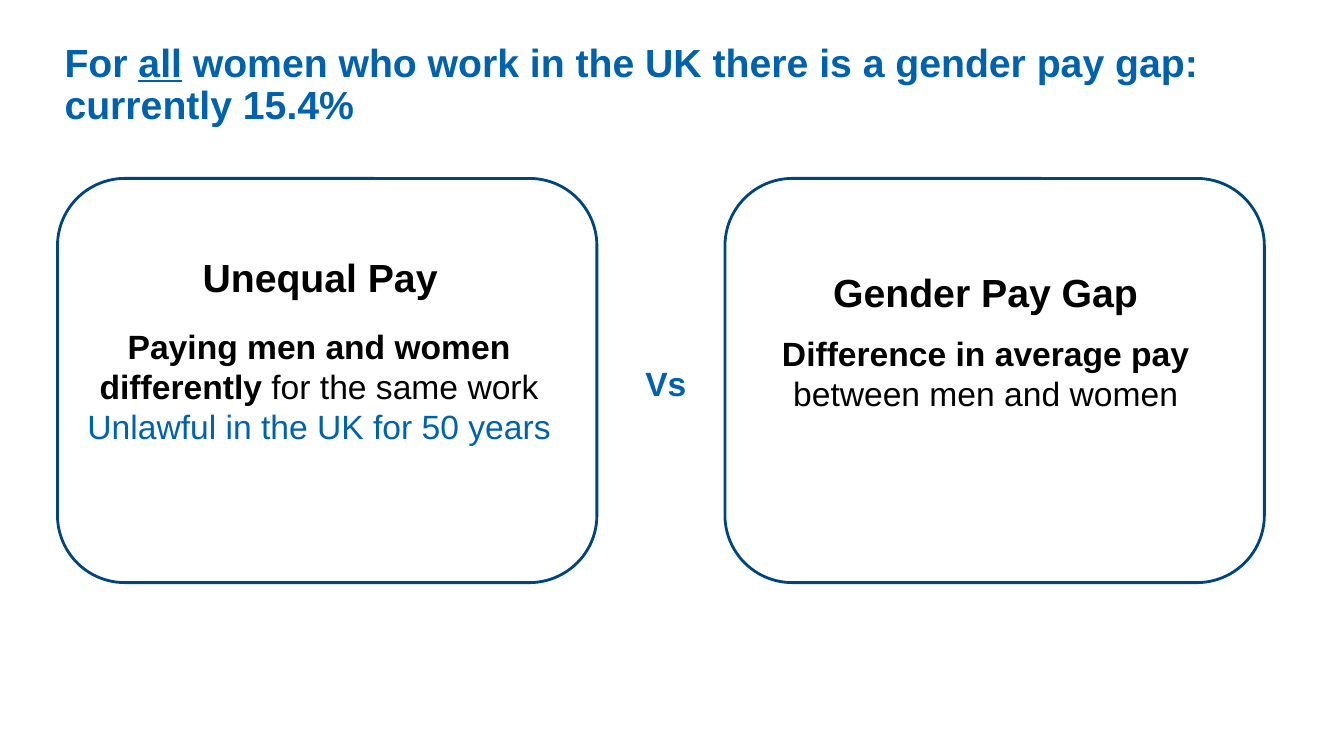
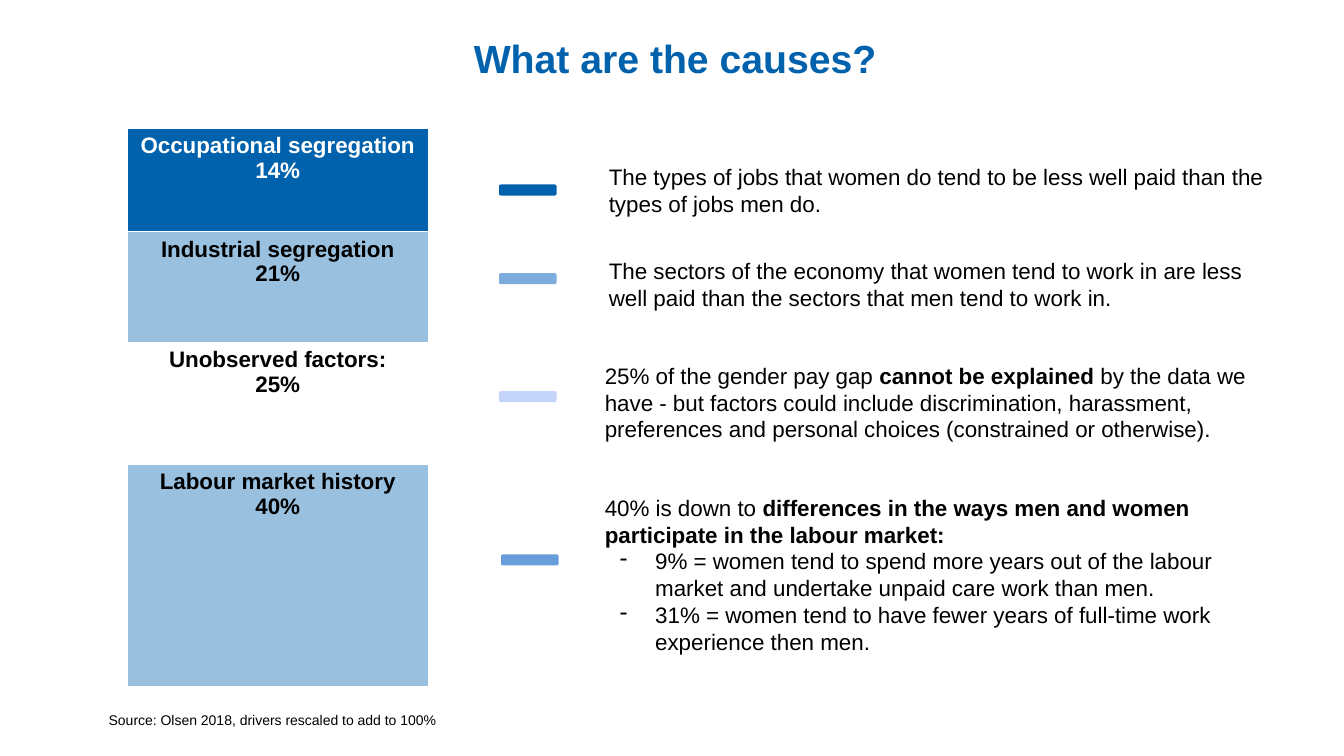
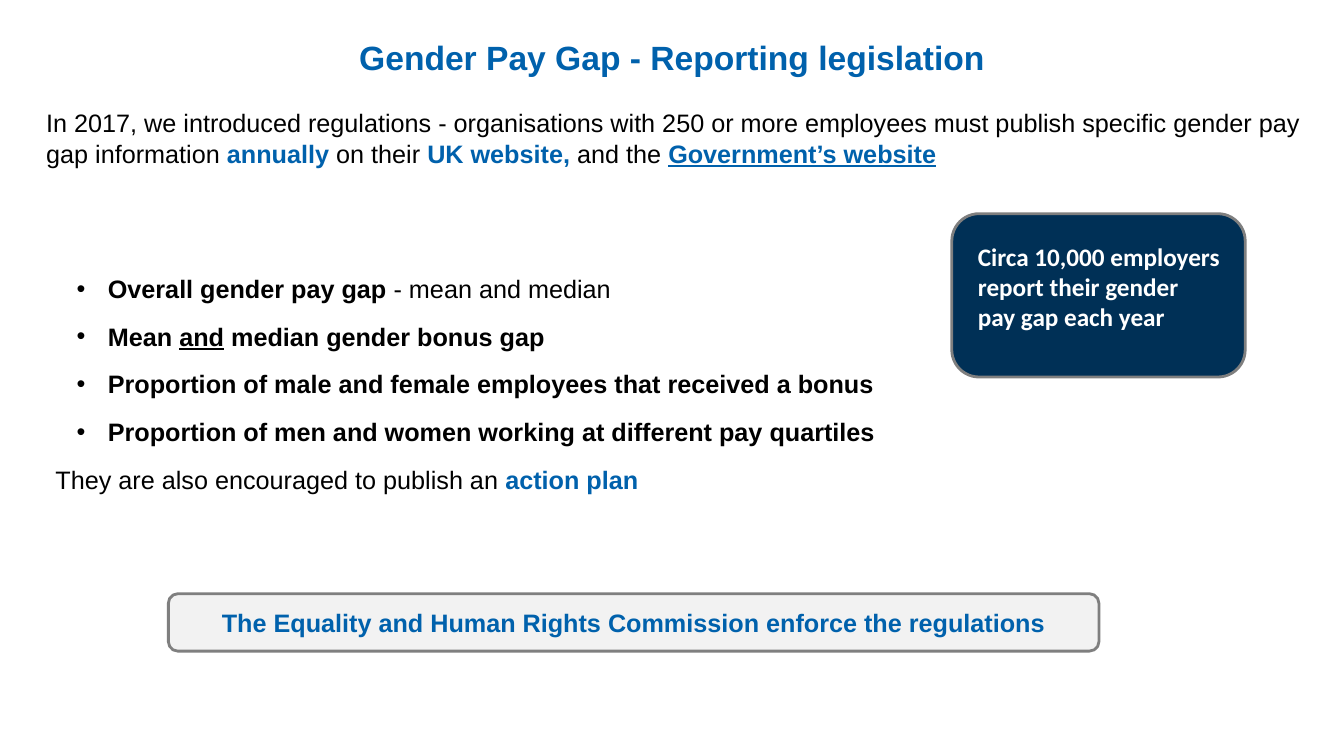
from lxml.etree import SubElement
from pptx import Presentation
from pptx.dml.color import RGBColor
from pptx.enum.shapes import MSO_SHAPE as Shape
from pptx.enum.text import MSO_ANCHOR as Anchor, MSO_AUTO_SIZE as AutoSize, PP_ALIGN as Align
from pptx.oxml.ns import qn
from pptx.util import Inches, Pt

BLUE = RGBColor(0x00, 0x61, 0xAC)
OUTLINE = RGBColor(0x00, 0x46, 0x7D)
NAVY = RGBColor(0x00, 0x30, 0x56)
GREY = RGBColor(0x7F, 0x7F, 0x7F)
PALE_GREY = RGBColor(0xF2, 0xF2, 0xF2)
PALE_BLUE = RGBColor(0x99, 0xC0, 0xDE)
BLACK = RGBColor(0, 0, 0)
WHITE = RGBColor(255, 255, 255)
MARKERS = [BLUE, RGBColor(0x7D, 0xAC, 0xDC), RGBColor(0xC4, 0xD4, 0xFB), RGBColor(0x68, 0x9D, 0xDB)]


def write(holder, paragraphs, size, box=None, insets=(0, 0, 0, 0), align=Align.LEFT,
          color=BLACK, font="Arial", anchor=Anchor.TOP, gap=0):
    if box:
        holder.left, holder.top, holder.width, holder.height = map(Inches, box)
    frame = holder.text_frame
    frame.word_wrap = True
    frame.auto_size = AutoSize.NONE
    frame.vertical_anchor = anchor
    frame.margin_left, frame.margin_top, frame.margin_right, frame.margin_bottom = map(Inches, insets)
    for index, (runs, bullet, indent, hanging) in enumerate(paragraphs):
        paragraph = frame.paragraphs[0] if index == 0 else frame.add_paragraph()
        properties = paragraph._p.get_or_add_pPr()
        properties.set("marL", str(Inches(indent)))
        properties.set("indent", str(-Inches(hanging)))
        if bullet:
            SubElement(properties, qn("a:buChar")).set("char", bullet)
        else:
            SubElement(properties, qn("a:buNone"))
        paragraph.alignment = align
        paragraph.space_before = Pt(gap if index else 0)
        for words, marks in runs:
            run = paragraph.add_run()
            run.text = words
            run.font.name = font
            run.font.size = Pt(size)
            run.font.bold = "b" in marks
            run.font.underline = "u" in marks
            run.font.color.rgb = BLUE if "a" in marks else color


def plain(*runs):
    return runs, None, 0, 0


deck = Presentation()
deck.slide_width = Inches(13.33)
deck.slide_height = Inches(7.5)
title_only = deck.slide_layouts[5]
title_and_body = deck.slide_layouts[1]
empty_box = [0, 0, 0, 0]
tight = (0.07, 0.04, 0.07, 0.04)
even = (0.1, 0.1, 0.1, 0.1)
standard = (0.1, 0.05, 0.1, 0.05)

gap_slide = deck.slides.add_slide(title_only)
write(gap_slide.shapes.title,
      [plain(("For ", "b"), ("all", "bu"),
             (" women who work in the UK there is a gender pay gap: currently 15.4%", "b"))],
      28, (0.64, 0.43, 12.12, 0.87), color=BLUE)
gap_slide.shapes.title.text_frame.paragraphs[0].line_spacing = 0.9

unequal_pay = [plain(("Paying men and women differently ", "b"), ("for the same work", "")),
               plain(("Unlawful in the UK for 50 years", "a"))]
average_gap = [plain(("Difference in average pay ", "b"), ("between men and women", ""))]
gap_texts = [
    (unequal_pay, 24, (0.78, 3.19, 4.77, 1.36), tight, Align.CENTER),
    (average_gap, 24, (7.63, 3.26, 4.29, 0.68), tight, Align.CENTER),
    ([plain(("Vs", "ab"))], 24, (6.4, 3.6, 0.65, 0.95), empty_box, Align.LEFT),
    ([plain(("Unequal Pay", "b"))], 28, (2.01, 2.51, 2.47, 0.57), empty_box, Align.LEFT),
    ([plain(("Gender Pay Gap", "b"))], 28, (8.05, 2.66, 3.45, 0.41), empty_box, Align.CENTER),
]
for paragraphs, size, box, insets, align in gap_texts:
    write(gap_slide.shapes.add_textbox(*empty_box), paragraphs, size, box, insets, align)
for left in (0.57, 7.19):
    card = gap_slide.shapes.add_shape(Shape.ROUNDED_RECTANGLE, Inches(left), Inches(1.77),
                                      Inches(5.35), Inches(4.01))
    card.shadow.inherit = False
    card.fill.background()
    card.line.color.rgb = OUTLINE
    card.line.width = Pt(2)

causes_slide = deck.slides.add_slide(title_only)
write(causes_slide.shapes.title, [plain(("What are the causes?", "b"))],
      28, (0.45, 0.34, 12.49, 0.52), align=Align.CENTER, color=BLUE)

history = [
    plain(("40% is down to ", ""),
          ("differences in the ways men and women participate in the labour market:", "b")),
    ([("9% = women tend to spend more years out of the labour market and undertake "
       "unpaid care work than men.", "")], "-", 0.5, 0.35),
    ([("31% = women tend to have fewer years of full-time work experience then men.", "")],
     "-", 0.5, 0.35),
]
occupations = [plain(("The types of jobs that women do tend to be less well paid than "
                      "the types of jobs men do.", ""))]
industries = [plain(("The sectors of the economy that women tend to work in are less well paid "
                     "than the sectors that men tend to work in.", ""))]
unobserved = [plain(("25% of the gender pay gap ", ""), ("cannot be explained ", "b"),
                    ("by the data we have - but factors could include discrimination, harassment, "
                     "preferences and personal choices (constrained or otherwise).", ""))]
source = [plain(("Source: Olsen 2018, drivers rescaled to add to 100%", ""))]
for paragraphs, size, box in [
    (history, 16, (5.9, 4.8, 6.94, 2.13)),
    (occupations, 16, (5.94, 1.52, 7, 0.74)),
    (industries, 16, (5.94, 2.45, 6.6, 1.11)),
    (unobserved, 16, (5.9, 3.49, 6.6, 1.36)),
    (source, 10, (0.98, 6.96, 3.57, 0.46)),
]:
    write(causes_slide.shapes.add_textbox(*empty_box), paragraphs, size, box, even)

drivers = [
    ("Occupational segregation", "14%", 1.03, BLUE, WHITE),
    ("Industrial segregation", "21%", 1.1, PALE_BLUE, BLACK),
    ("Unobserved factors:", "25%", 1.21, None, BLACK),
    ("Labour market history", "40%", 2.2, PALE_BLUE, BLACK),
]
driver_table = causes_slide.shapes.add_table(len(drivers), 1, Inches(1.26), Inches(1.27),
                                             Inches(2.99), Inches(5.54)).table
driver_table.first_row = False
driver_table.horz_banding = False
for index, (driver, share, height, fill, ink) in enumerate(drivers):
    driver_table.rows[index].height = Inches(height)
    cell = driver_table.cell(index, 0)
    if fill is None:
        cell.fill.background()
    else:
        cell.fill.solid()
        cell.fill.fore_color.rgb = fill
    cell.text_frame.text = f"{driver}\n{share}"
    for paragraph in cell.text_frame.paragraphs:
        paragraph.alignment = Align.CENTER
        label = paragraph.runs[0].font
        label.name, label.size, label.bold = "Arial", Pt(16), True
        label.color.rgb = ink

for (left, top), shade in zip([(4.95, 1.83), (4.95, 2.71), (4.95, 3.88), (4.97, 5.5)], MARKERS):
    marker = causes_slide.shapes.add_shape(Shape.ROUNDED_RECTANGLE, Inches(left), Inches(top),
                                           Inches(0.57), Inches(0.11))
    marker.shadow.inherit = False
    marker.fill.solid()
    marker.fill.fore_color.rgb = shade
    marker.line.fill.background()

law_slide = deck.slides.add_slide(title_and_body)
write(law_slide.shapes.title, [plain(("Gender Pay Gap - Reporting legislation", "b"))],
      24, (0, 0.32, 13.33, 0.5), standard, Align.CENTER, BLUE, anchor=Anchor.MIDDLE)
regulations = [plain(
    ("In 2017, we introduced regulations - organisations with 250 or more employees must publish "
     "specific gender pay gap information ", ""),
    ("annually", "ab"), (" on their ", ""), ("UK website, ", "ab"), ("and the ", ""),
    ("Government’s website", "abu"))]
write(law_slide.shapes.add_textbox(*empty_box), regulations, 18, (0.36, 1.02, 12.97, 0.94), standard)

measures = [
    [("Overall gender pay gap", "b"), (" - mean and median", "")],
    [("Mean ", "b"), ("and", "bu"), (" median gender bonus gap", "b")],
    [("Proportion of male and female employees that received a bonus", "b")],
    [("Proportion of men and women working at different pay quartiles", "b")],
]
requirements = [(runs, "•", 0.66, 0.31) for runs in measures]
requirements.append(([("They are also encouraged to publish an ", ""), ("action plan", "ab")],
                     None, 0.14, 0))
write(law_slide.placeholders[1], requirements, 18, (0.31, 2.48, 10.31, 2.79),
      (0.1, 0.23, 0.1, 0.05), gap=12.5)

callouts = [
    ("Circa 10,000 employers report their gender pay gap each year", (9.44, 2.12, 2.91, 1.62),
     (0.18, 0.19, 0.17, 0.05), NAVY, WHITE, "Calibri", Align.LEFT, Anchor.TOP),
    ("The Equality and Human Rights Commission enforce the regulations", (1.67, 5.89, 9.23, 0.57),
     standard, PALE_GREY, BLUE, "Arial", Align.CENTER, Anchor.MIDDLE),
]
for words, box, insets, fill, ink, font, align, anchor in callouts:
    callout = law_slide.shapes.add_shape(Shape.ROUNDED_RECTANGLE, *map(Inches, box))
    callout.shadow.inherit = False
    callout.fill.solid()
    callout.fill.fore_color.rgb = fill
    callout.line.color.rgb = GREY
    callout.line.width = Pt(2)
    write(callout, [plain((words, "b"))], 18, None, insets, align, ink, font, anchor)

deck.save("out.pptx")
